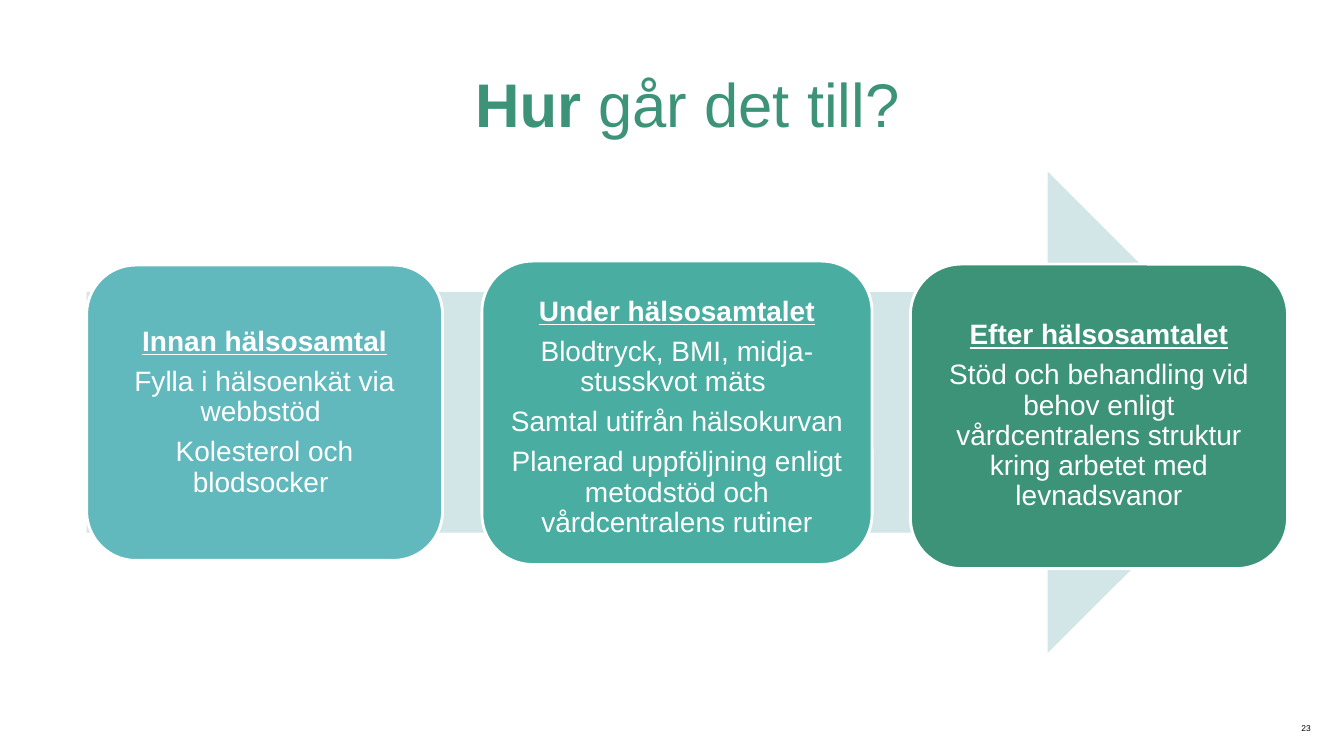
from pptx import Presentation, util as u
from pptx.dml.color import RGBColor
from pptx.enum import shapes, text

WHITE = RGBColor(0xFF, 0xFF, 0xFF)
BLACK = RGBColor(0, 0, 0)
PALE = RGBColor(0xD2, 0xE6, 0xE8)
AQUA = RGBColor(0x61, 0xB9, 0xBD)
TEAL = RGBColor(0x49, 0xAE, 0xA1)
GREEN = RGBColor(0x3D, 0x93, 0x78)

TITLE = [("Hur", True), (" går det till?", False)]
PAGE = "23"
# left, top, width, height, extra top inset, fill, heading, body paragraphs
STEPS = [
    (0.86, 2.63, 3.53, 2.93, 0, AQUA, "Innan hälsosamtal",
     ["Fylla i hälsoenkät via webbstöd ", "Kolesterol och blodsocker "]),
    (4.78, 2.59, 3.87, 3.01, 0.1, TEAL, "Under hälsosamtalet",
     ["Blodtryck, BMI, midja-stusskvot mäts ",
      "Samtal utifrån hälsokurvan",
      "Planerad uppföljning enligt metodstöd och vårdcentralens rutiner"]),
    (9.03, 2.62, 3.74, 3.02, 0, GREEN, "Efter hälsosamtalet",
     ["Stöd och behandling vid behov enligt vårdcentralens struktur "
      "kring arbetet med levnadsvanor"]),
]
ARROW = (0.86, 1.7, 11.92, 4.78)
TITLE_BOX = (2.36, 0.61, 8.92, 0.84)
PAGE_BOX = (12.33, 7.17, 0.67, 0.1)
INSET = 0.08

prs = Presentation()
prs.slide_width, prs.slide_height = u.Inches(13.33), u.Inches(7.5)
s = prs.slides.add_slide(prs.slide_layouts[6])


def inches(box):
    return [u.Inches(v) for v in box]


def add_filled(kind, box, fill):
    sp = s.shapes.add_shape(kind, *inches(box))
    sp.shadow.inherit = False
    sp.fill.solid()
    sp.fill.fore_color.rgb = fill
    sp.line.fill.background()
    return sp


def add_run(p, words, size, color, **fmt):
    r = p.add_run()
    r.text = words
    r.font.color.rgb = color
    for key, value in dict(name="Arial", size=u.Pt(size), **fmt).items():
        setattr(r.font, key, value)


def set_insets(tf, left, top, right, bottom):
    for side, value in dict(left=left, top=top, right=right, bottom=bottom).items():
        setattr(tf, "margin_" + side, u.Inches(value))


def add_text_box(box, align):
    """Return the text frame and its first paragraph."""
    tf = s.shapes.add_textbox(*inches(box)).text_frame
    tf.word_wrap = True
    p = tf.paragraphs[0]
    p.alignment = align
    return tf, p


def add_step(left, top, width, height, extra, fill, heading, body):
    sp = add_filled(shapes.MSO_SHAPE.ROUNDED_RECTANGLE,
                    (left, top, width, height), fill)
    sp.line.color.rgb = WHITE
    sp.line.width = u.Pt(2)
    tf = sp.text_frame
    tf.word_wrap = True
    tf.vertical_anchor = text.MSO_ANCHOR.MIDDLE
    set_insets(tf, INSET, INSET + extra, INSET, INSET)
    for i, words in enumerate([heading] + body):
        p = tf.add_paragraph() if i else tf.paragraphs[0]
        for key, value in dict(alignment=text.PP_ALIGN.CENTER, line_spacing=0.9,
                               space_after=u.Pt(7)).items():
            setattr(p, key, value)
        add_run(p, words, 20, WHITE, bold=i == 0, underline=i == 0)


tf, p = add_text_box(PAGE_BOX, text.PP_ALIGN.RIGHT)
set_insets(tf, 0, 0, 0, 0)
add_run(p, PAGE, 6, BLACK)

tf, p = add_text_box(TITLE_BOX, text.PP_ALIGN.CENTER)
for words, bold in TITLE:
    add_run(p, words, 44, GREEN, bold=bold)

add_filled(shapes.MSO_SHAPE.RIGHT_ARROW, ARROW, PALE)
for step in STEPS:
    add_step(*step)

prs.save("out.pptx")
